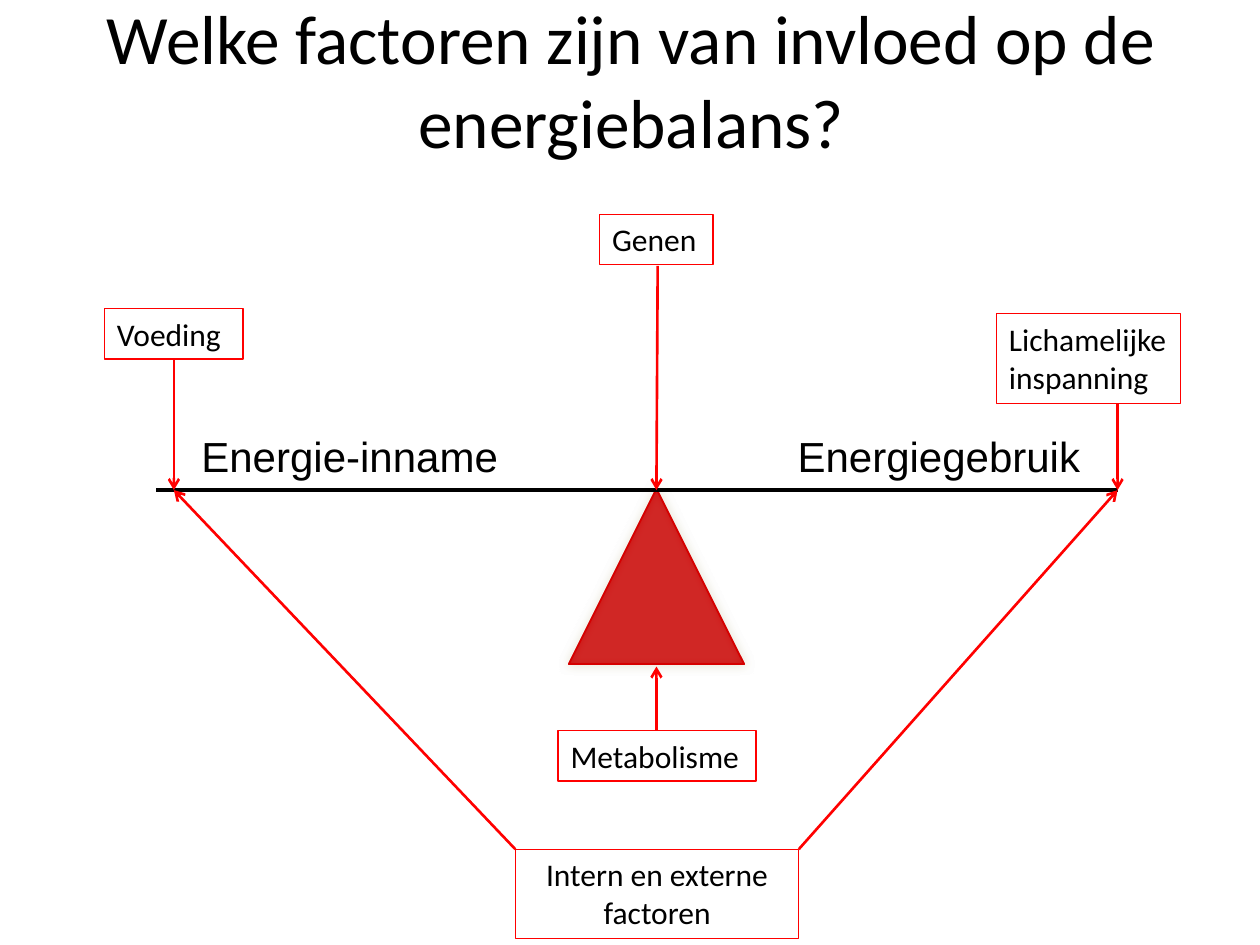
from dataclasses import dataclass

from lxml.etree import SubElement
from pptx import Presentation
from pptx.dml.color import RGBColor
from pptx.enum.shapes import MSO_CONNECTOR as Connector, MSO_SHAPE as Shape
from pptx.enum.text import MSO_ANCHOR as Anchor, PP_ALIGN as Align
from pptx.oxml.ns import qn
from pptx.util import Inches, Pt

COLORS = {"text": "000000", "beam": "000000", "factor": "FF0000",
          "fulcrum": "CB0000", "fulcrum_edge": "D50000", "shadow": "EEECE1"}
BEAM_Y = 3.89
BEAM_LEFT, BEAM_RIGHT = 1.24, 8.87
INTAKE_X, CENTER_X = 1.38, 5.21


@dataclass
class Label:
    text: str
    left: float
    top: float
    width: float
    height: float
    size: float = 18
    font: str = "Calibri"
    align: Align = Align.LEFT
    anchor: Anchor = Anchor.TOP
    framed: bool = False


@dataclass
class Line:
    start: tuple[float, float]
    end: tuple[float, float]
    color: str = "factor"
    width: float = 1.5
    arrow: bool = True


def rgb(name: str) -> RGBColor:
    return RGBColor.from_string(COLORS[name])


def draw_label(slide, label: Label) -> None:
    box = slide.shapes.add_textbox(Inches(label.left), Inches(label.top),
                                   Inches(label.width), Inches(label.height))
    if label.framed:
        box.line.color.rgb = rgb("factor")
        box.line.width = Pt(0.75)
    frame = box.text_frame
    frame.word_wrap = True
    frame.vertical_anchor = label.anchor
    paragraph = frame.paragraphs[0]
    paragraph.alignment = label.align
    run = paragraph.add_run()
    run.text = label.text
    for attribute, value in {"size": Pt(label.size), "name": label.font}.items():
        setattr(run.font, attribute, value)
    run.font.color.rgb = rgb("text")


def draw_line(slide, line: Line) -> None:
    connector = slide.shapes.add_connector(
        Connector.STRAIGHT, *(Inches(v) for v in line.start + line.end))
    connector.line.color.rgb = rgb(line.color)
    connector.line.width = Pt(line.width)
    if line.arrow:
        SubElement(connector.line._get_or_add_ln(), qn("a:tailEnd"), type="arrow")
    SubElement(connector._element.spPr, qn("a:effectLst"))


def draw_fulcrum(slide) -> None:
    side = 1.39
    fulcrum = slide.shapes.add_shape(
        Shape.ISOSCELES_TRIANGLE, Inches(CENTER_X - side / 2), Inches(3.88),
        Inches(side), Inches(side))
    fulcrum.fill.solid()
    fulcrum.fill.fore_color.rgb = rgb("fulcrum")
    fulcrum.line.color.rgb = rgb("fulcrum_edge")
    fulcrum.line.width = Pt(1)
    properties = fulcrum._element.spPr
    fill_color = properties.find(qn("a:solidFill")).find(qn("a:srgbClr"))
    SubElement(fill_color, qn("a:alpha"), val="80000")
    # Soft shadow all around the triangle
    fulcrum.shadow.inherit = False
    shadow = SubElement(properties.find(qn("a:effectLst")), qn("a:outerShdw"),
                        blurRad=str(Pt(6)), dist="0", dir="0", rotWithShape="0")
    shadow_color = SubElement(shadow, qn("a:srgbClr"), val=COLORS["shadow"])
    SubElement(shadow_color, qn("a:alpha"), val="80000")


TITLE = Label("Welke factoren zijn van invloed op de energiebalans?",
              0.51, 0, 9, 1.25, size=39.6, align=Align.CENTER, anchor=Anchor.MIDDLE)
FACTORS = [
    Label("Voeding", 0.83, 2.45, 1.1, 0.4, framed=True),
    Label("Genen", 4.76, 1.7, 0.9, 0.4, framed=True),
    Label("Lichamelijke inspanning", 7.91, 2.49, 1.46, 0.71, framed=True),
    Label("Metabolisme", 4.43, 5.8, 1.57, 0.4, framed=True),
    Label("Intern en externe factoren", 4.09, 6.74, 2.25, 0.71,
          align=Align.CENTER, framed=True),
]
BEAM = Line((BEAM_LEFT, BEAM_Y), (BEAM_RIGHT, BEAM_Y), "beam", 2, arrow=False)
ARROWS = [
    Line((INTAKE_X, 2.86), (INTAKE_X, BEAM_Y)),
    Line((5.22, 2.11), (CENTER_X, BEAM_Y)),
    Line((BEAM_RIGHT, 3.2), (BEAM_RIGHT, BEAM_Y)),
    Line((CENTER_X, 5.8), (CENTER_X, 5.29)),
    Line((4.09, 6.74), (INTAKE_X, BEAM_Y)),
    Line((6.34, 6.74), (BEAM_RIGHT, BEAM_Y)),
]
BALANCE_SIDES = [
    Label("Energie-inname", 1.5, 3.37, 2.92, 0.5, 24, "Arial"),
    Label("Energiegebruik", 5.75, 3.37, 2.92, 0.5, 24, "Arial", Align.RIGHT),
]


def main() -> None:
    presentation = Presentation()
    presentation.slide_width = Inches(10)
    presentation.slide_height = Inches(7.5)
    slide = presentation.slides.add_slide(presentation.slide_layouts[6])

    draw_label(slide, TITLE)
    # Scale: two translucent triangles deepen the red, the beam lies on top
    for _ in range(2):
        draw_fulcrum(slide)
    draw_line(slide, BEAM)
    # Factors and their arrows
    for factor in FACTORS:
        draw_label(slide, factor)
    for arrow in ARROWS:
        draw_line(slide, arrow)
    # Names of both sides of the balance
    for side in BALANCE_SIDES:
        draw_label(slide, side)

    presentation.save("out.pptx")


if __name__ == "__main__":
    main()
